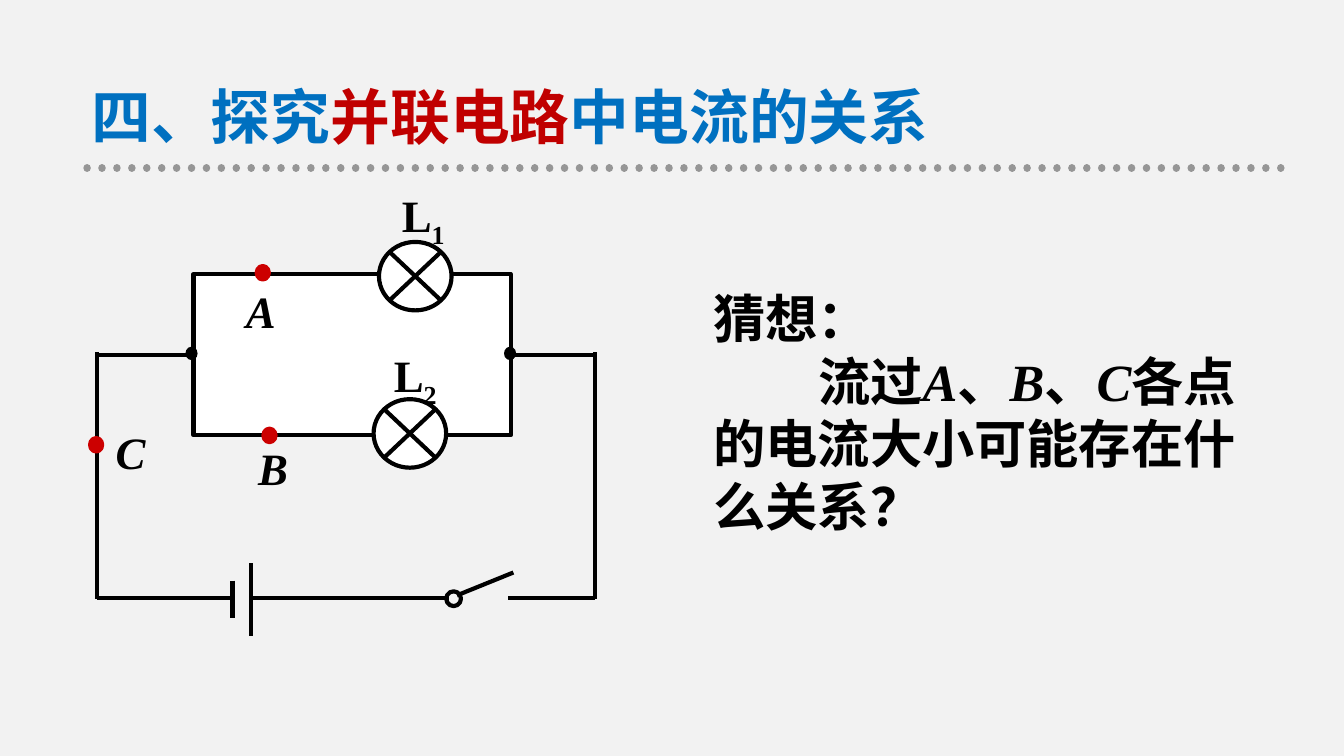
import lxml.etree
import pptx
import pptx.dml.color
import pptx.enum.dml
import pptx.enum.shapes
import pptx.enum.text
import pptx.oxml.ns
import pptx.util

Inches, Pt = pptx.util.Inches, pptx.util.Pt
SHAPE = pptx.enum.shapes.MSO_SHAPE
COLORS = {"paper": "F2F2F2", "white": "FFFFFF", "black": "000000", "blue": "0070C0",
          "red": "C00000", "point": "CC0000", "rule": "969696"}
HAN, SANS, SERIF = "Noto Sans CJK SC", "Arial", "Times New Roman"


def rgb(name):
    return pptx.dml.color.RGBColor.from_string(COLORS[name])


def add_child(parent, tag, **attrs):
    return lxml.etree.SubElement(parent, pptx.oxml.ns.qn(tag), **attrs)


class CircuitSlide:
    """Style and drawing methods for one circuit slide."""

    def __init__(self, prs):
        self.s = prs.slides.add_slide(prs.slide_layouts[1])
        self.s.background.fill.solid()
        self.s.background.fill.fore_color.rgb = rgb("paper")

    def runs(self, p, parts, size, font=SANS, color="black"):
        for text, style in parts:
            r = p.add_run()
            r.text = text
            r.font.size, r.font.bold = Pt(size), True
            r.font.italic = style.get("italic", False)
            r.font.name = style.get("font", font)
            r.font.color.rgb = rgb(style.get("color", color))
            rPr = r.font._element
            if "baseline" in style:
                rPr.set("baseline", style["baseline"])
            add_child(rPr, "a:ea", typeface=HAN)

    def placeholder(self, sp, box, paragraphs, size, font, spacing, first_indent=0):
        sp.left, sp.top, sp.width, sp.height = map(Inches, box)
        tf = sp.text_frame
        tf.word_wrap = True
        tf.auto_size = pptx.enum.text.MSO_AUTO_SIZE.NONE
        tf.vertical_anchor = pptx.enum.text.MSO_ANCHOR.TOP
        for i, parts in enumerate(paragraphs):
            p = tf.add_paragraph() if i else tf.paragraphs[0]
            p.alignment = pptx.enum.text.PP_ALIGN.LEFT
            p.space_before = Pt(0)
            p.line_spacing = Pt(spacing)
            pPr = p._p.get_or_add_pPr()
            pPr.set("marL", "0")
            pPr.set("indent", str(Pt(first_indent) if i else 0))
            add_child(pPr, "a:buNone")
            self.runs(p, parts, size, font)

    def label(self, left, top, width, text, subscript=None):
        sp = self.s.shapes.add_textbox(*map(Inches, (left, top, width, 0.4)))
        tf = sp.text_frame
        tf.word_wrap = True
        tf.margin_left = tf.margin_right = tf.margin_top = tf.margin_bottom = 0
        parts = [(text, {"italic": subscript is None})]
        if subscript:
            parts.append((subscript, {"baseline": "-25000"}))
        self.runs(tf.paragraphs[0], parts, 24, SERIF)

    def wire(self, x1, y1, x2, y2, width=2.25, color="black"):
        c = self.s.shapes.add_connector(pptx.enum.shapes.MSO_CONNECTOR.STRAIGHT,
                                        *map(Inches, (x1, y1, x2, y2)))
        c.line.color.rgb = rgb(color)
        c.line.width = Pt(width)
        add_child(c._element.spPr, "a:effectLst")
        return c

    def dotted_rule(self, x1, x2, y):
        c = self.wire(x1, y, x2, y, 4, "rule")
        c.line.dash_style = pptx.enum.dml.MSO_LINE.ROUND_DOT
        c.line._ln.set("cap", "rnd")

    def shape(self, kind, left, top, width, height, fill=None, line="black"):
        sp = self.s.shapes.add_shape(kind, *map(Inches, (left, top, width, height)))
        sp.shadow.inherit = False
        if fill:
            sp.fill.solid()
            sp.fill.fore_color.rgb = rgb(fill)
        else:
            sp.fill.background()
        if line:
            sp.line.color.rgb = rgb(line)
            sp.line.width = Pt(2.25)
        else:
            sp.line.fill.background()
        return sp

    def lamp(self, left, top):
        self.shape(SHAPE.FLOWCHART_SUMMING_JUNCTION, left, top, 0.54, 0.51, "white")

    def dot(self, left, top, fill, line=None):
        self.shape(SHAPE.OVAL, left, top, 0.09, 0.1, fill, line)


def main():
    prs = pptx.Presentation()
    prs.slide_width = Inches(10)
    prs.slide_height = prs.slide_width * 9 // 16
    slide = CircuitSlide(prs)
    title, body = slide.s.placeholders

    slide.dotted_rule(9.53, 0.62, 1.25)
    slide.placeholder(title, (0.58, 0.55, 7.02, 0.64), [[
        ("四、探究", {"color": "blue"}),
        ("并联电路", {"color": "red"}),
        ("中电流的关系", {"color": "blue"})]], 32, HAN, 38)
    point = {"font": SERIF, "italic": True}
    slide.placeholder(body, (5.21, 2.08, 4.09, 1.99), [
        [("猜想：", {})],
        [("流过", {}), ("A", point), ("、", {}), ("B", point), ("、", {}), ("C", point),
         ("各点的电流大小可能存在什么关系？", {})]], 28, SANS, 33.6, first_indent=56)

    left, right, middle, bottom = 0.72, 4.43, 2.64, 4.45
    loop = slide.shape(SHAPE.RECTANGLE, 1.44, 2.04, 2.36, 1.2, "white")
    slide.wire(left, middle, 1.44, middle).end_connect(loop, 1)
    slide.wire(3.8, middle, right, middle).begin_connect(loop, 3)
    for x in (left, right):
        slide.wire(x, middle - 0.02, x, bottom + 0.01)
    for x1, x2 in ((left, 1.71), (1.88, 3.34), (3.78, right)):
        slide.wire(x1, bottom, x2, bottom)

    slide.wire(1.73, 4.32, 1.73, 4.6, 3)
    slide.wire(1.87, 4.19, 1.87, 4.73)
    slide.wire(3.4, 4.43, 3.82, 4.26)
    slide.shape(SHAPE.OVAL, 3.32, 4.4, 0.11, 0.11)

    slide.lamp(2.82, 1.8)
    slide.lamp(2.78, 2.97)
    slide.label(2.99, 1.4, 0.63, "L", "1")
    slide.label(2.93, 2.59, 0.58, "L", "2")

    for x in (1.38, 3.75):
        slide.dot(x, 2.58, "black")
    for name, x, y, label_x, label_y in (("A", 1.91, 1.98, 1.83, 2.11),
                                         ("B", 1.96, 3.19, 1.92, 3.28),
                                         ("C", 0.67, 3.26, 0.86, 3.16)):
        slide.dot(x, y, "point", "point")
        slide.label(label_x, label_y, 0.38, name)

    prs.save("out.pptx")


if __name__ == "__main__":
    main()
